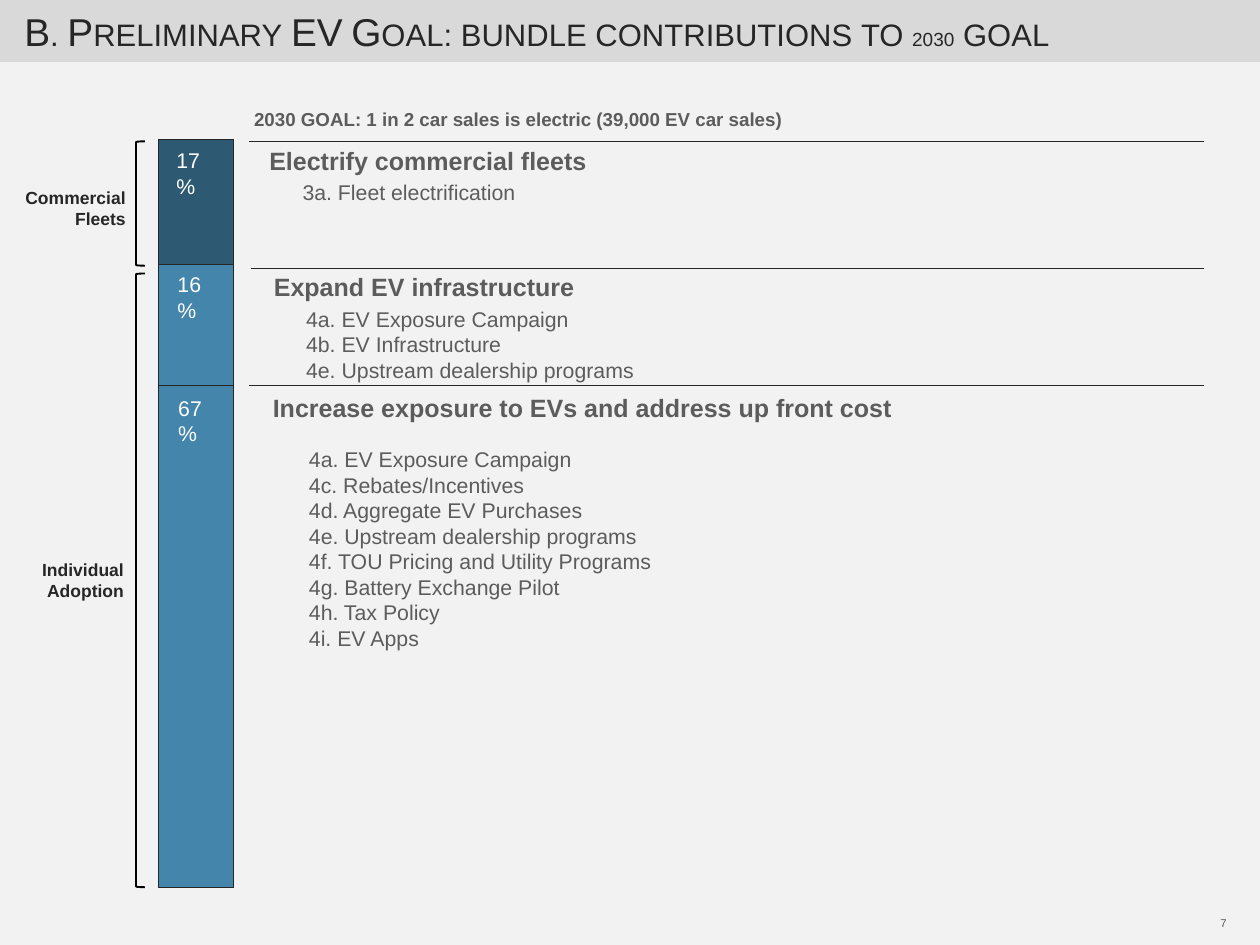
from lxml.etree import SubElement
from pptx import Presentation
from pptx.chart.data import CategoryChartData
from pptx.dml.color import RGBColor
from pptx.enum.chart import XL_CHART_TYPE
from pptx.enum.shapes import MSO_CONNECTOR, MSO_SHAPE
from pptx.enum.text import MSO_ANCHOR, PP_ALIGN
from pptx.oxml import parse_xml
from pptx.oxml.ns import nsdecls, qn
from pptx.util import Cm, Pt

INK, GREY, WHITE = "262626", "5C5C5C", "FFFFFF"


def paint(part, color):
    """Give a fill or a line one solid colour."""
    fill = getattr(part, "fill", part)
    fill.solid()
    fill.fore_color.rgb = RGBColor.from_string(color)


def write(box, lines, size, color, bold=False, wrap=True, align=PP_ALIGN.LEFT):
    """Add a text box with one paragraph per line."""
    frame = shapes.add_textbox(*map(Cm, box)).text_frame
    look = dict(word_wrap=wrap, margin_left=Cm(0.36), margin_right=Cm(0.36),
                margin_top=Cm(0.18), margin_bottom=Cm(0.18))
    for name, value in look.items():
        setattr(frame, name, value)
    frame.text = "\n".join(lines)
    for para in frame.paragraphs:
        para.alignment = align
        for run in para.runs:
            for name, value in dict(size=Pt(size), bold=bold, name="Arial").items():
                setattr(run.font, name, value)
            paint(run.font, color)
    return frame


deck = Presentation()
deck.slide_width, deck.slide_height = Cm(35.56), Cm(26.67)
slide = deck.slides.add_slide(deck.slide_layouts[6])
shapes = slide.shapes
paint(slide.background, "F2F2F2")

# Title band
band = shapes.add_shape(MSO_SHAPE.RECTANGLE, 0, 0, Cm(35.56), Cm(1.75))
band.shadow.inherit = False
paint(band, "D9D9D9")
paint(band.line, "D9D9D9")
band.line.width = Pt(0.75)

# Title in small capitals, with a smaller year
title = write((0.33, 0, 34.72, 1.75),
              ["B. Preliminary EV Goal: bundle contributions to "], 31, INK)
title.vertical_anchor = MSO_ANCHOR.MIDDLE
para = title.paragraphs[0]
for text, size in (("2030", 19), (" goal", 31)):
    run = para.add_run()
    run.text = text
    run.font.size, run.font.name = Pt(size), "Arial"
    paint(run.font, INK)
for run in para.runs:
    run.font._element.set("cap", "small")

# Stacked column of shares
data = CategoryChartData(number_format="General")
data.categories = ["1"]
stack = ((100, "4385AB"), (24, "4385AB"), (25, "2D5972"))
for num, (value, color) in enumerate(stack, 1):
    data.add_series(f"Series {num}", [value])
chart = shapes.add_chart(XL_CHART_TYPE.COLUMN_STACKED, Cm(2.51), Cm(3.25),
                         Cm(7.67), Cm(22.48), data).chart
chart.has_legend = chart.has_title = False
chart.font.size, chart.font.name = Pt(10), "DejaVu Sans"
paint(chart.font, INK)
axis = chart.value_axis
axis.minimum_scale, axis.maximum_scale = 0, 149
axis.has_major_gridlines = False
axis.tick_labels.number_format = "0.0%"
axis.tick_labels.number_format_is_linked = False
axis.visible = chart.category_axis.visible = False
plot = chart.plots[0]
plot.gap_width, plot.overlap, plot.vary_by_categories = 150, 100, False
for series, (value, color) in zip(plot.series, stack):
    paint(series.format, color)
    paint(series.format.line, INK)
    series.format.line.width = Pt(0.75)

# Fixed plot area
area = chart._chartSpace.chart.plotArea
for old in area.findall(qn("c:layout")):
    area.remove(old)
layout = parse_xml(f"<c:layout {nsdecls('c')}><c:manualLayout/></c:layout>")
for tag, value in (("layoutTarget", "inner"), ("xMode", "edge"), ("yMode", "edge"),
                   ("x", 0.05), ("y", 0.03), ("w", 0.69), ("h", 0.94)):
    SubElement(layout[0], qn(f"c:{tag}")).set("val", str(value))
area.insert(0, layout)

# Rules above the bundles
for left, top in ((7.04, 3.99), (7.09, 7.59), (7.04, 10.87)):
    rule = shapes.add_connector(MSO_CONNECTOR.STRAIGHT, Cm(left), Cm(top),
                                Cm(33.99), Cm(top))
    paint(rule.line, INK)
    rule.line.width = Pt(0.75)
    SubElement(rule._element.spPr, qn("a:effectLst"))

# Brackets and their labels
for top, tall, left, head, lines in (
        (3.99, 3.51, -0.61, 5.11, ["Commercial", "Fleets"]),
        (7.72, 17.32, -0.66, 15.6, ["Individual Adoption"])):
    brace = shapes.add_shape(MSO_SHAPE.LEFT_BRACKET, Cm(3.84), Cm(top),
                             Cm(0.25), Cm(tall))
    brace.shadow.inherit = False
    brace.fill.background()
    paint(brace.line, "000000")
    brace.line.width = Pt(1.5)
    write((left, head, 4.52, 1.55), lines, 14, INK, True, align=PP_ALIGN.RIGHT)

# Goal and bundle headings
write((6.81, 2.87, 21.31, 1.02),
      ["2030 GOAL: 1 in 2 car sales is electric (39,000 EV car sales)"],
      15, GREY, True)
for box, text in (
        ((7.24, 3.94, 9.75, 1.22), "Electrify commercial fleets"),
        ((7.37, 7.49, 9.27, 1.22), "Expand EV infrastructure"),
        ((7.34, 10.9, 18.34, 1.22),
         "Increase exposure to EVs and address up front cost")):
    write(box, [text], 20, GREY, True, wrap=False)

# Measures in each bundle
for box, lines in (
        ((8.18, 4.88, 13.94, 1.07), ["3a. Fleet electrification"]),
        ((8.28, 8.46, 13.94, 2.54),
         ["4a. EV Exposure Campaign", "4b. EV Infrastructure",
          "4e. Upstream dealership programs"]),
        ((8.36, 12.42, 14.38, 6.91),
         ["4a. EV Exposure Campaign", "4c. Rebates/Incentives",
          "4d. Aggregate EV Purchases", "4e. Upstream dealership programs",
          "4f. TOU Pricing and Utility Programs", "4g. Battery Exchange Pilot",
          "4h. Tax Policy", "4i. EV Apps"])):
    write(box, lines, 17, GREY)

# Shares on the column
for left, top, text in ((4.62, 3.99, "17%"), (4.65, 7.49, "16%"),
                        (4.67, 10.97, "67%")):
    write((left, top, 1.9, 1.07), [text], 17, WHITE, wrap=False)

# Page number
write((33.15, 25.68, 1.83, 0.94), ["7"], 9, GREY, align=PP_ALIGN.RIGHT)

deck.save("out.pptx")
